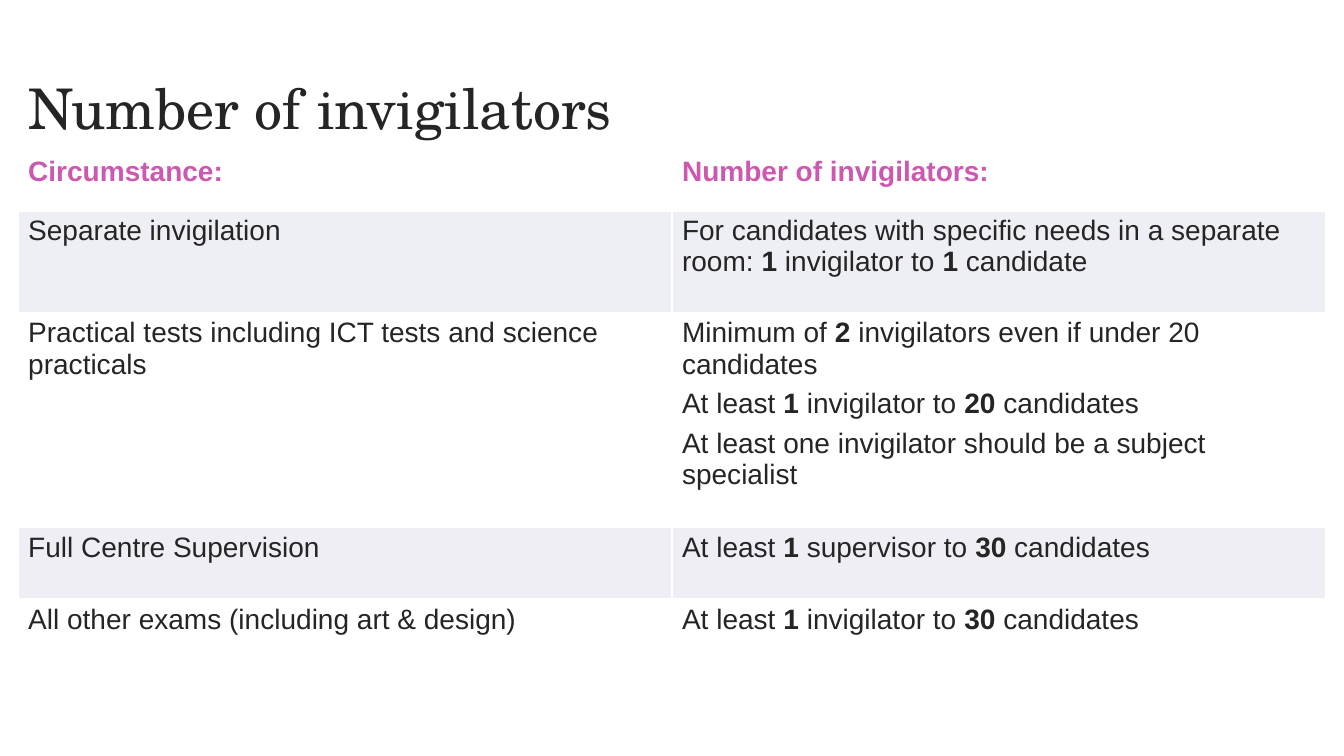
import dataclasses

import pptx
import pptx.dml.color
import pptx.enum.text
import pptx.oxml
import pptx.oxml.ns
import pptx.util

Inches = pptx.util.Inches
Pt = pptx.util.Pt

COLORS = {
    "text": "252525",
    "heading": "CC58B0",
    "white": "FFFFFF",
    "band": "EEEEF5",
    "band_low": "EEEEF4",
}


@dataclasses.dataclass(frozen=True)
class Run:
    text: str
    bold: bool = False


@dataclasses.dataclass(frozen=True)
class Row:
    height: float
    fill: str
    circumstance: list[list[Run]]
    invigilators: list[list[Run]]
    color: str = "text"
    bottom_line: float = 1


def ratio(before: str, first: str, middle: str, second: str, after: str) -> list[Run]:
    return [Run(before), Run(first, True), Run(middle), Run(second, True), Run(after)]


ROWS = [
    Row(0.58, "white", [[Run("Circumstance:", True)]],
        [[Run("Number of invigilators:", True)]], "heading", 3),
    Row(1.02, "band", [[Run("Separate invigilation")]],
        [ratio("For candidates with specific needs in a separate room: ",
               "1", " invigilator to ", "1", " candidate")]),
    Row(2.13, "white",
        [[Run("Practical tests including ICT tests and science practicals")]],
        [[Run("Minimum of "), Run("2 ", True),
          Run("invigilators even if under 20 candidates")],
         ratio("At least ", "1 ", "invigilator to ", "20 ", "candidates"),
         [Run("At least one invigilator should be a subject specialist")]]),
    Row(0.71, "band_low", [[Run("Full Centre Supervision")]],
        [ratio("At least ", "1", " supervisor to ", "30", " candidates")]),
    Row(0.75, "white", [[Run("All other exams (including art & design)")]],
        [ratio("At least ", "1", " invigilator to ", "30", " candidates")]),
    Row(0.75, "white", [], []),
]


def rgb(name: str) -> pptx.dml.color.RGBColor:
    return pptx.dml.color.RGBColor.from_string(COLORS[name])


def add_run(p, run: Run, size: float, font: str, color: str) -> None:
    r = p.add_run()
    r.text = run.text
    r.font.size = Pt(size)
    r.font.name = font
    r.font.bold = run.bold
    r.font.color.rgb = rgb(color)


def set_borders(cell, top: float, bottom: float) -> None:
    tc_pr = cell._tc.get_or_add_tcPr()
    sides = {"L": 1, "R": 1, "T": top, "B": bottom}
    for i, (side, width) in enumerate(sides.items()):
        tc_pr.insert(i, pptx.oxml.parse_xml(
            f'<a:ln{side} {pptx.oxml.ns.nsdecls("a")} w="{Pt(width)}">'
            f'<a:solidFill><a:srgbClr val="{COLORS["white"]}"/></a:solidFill>'
            f'</a:ln{side}>'))


def fill_cell(cell, paragraphs: list[list[Run]], row: Row, top_line: float) -> None:
    cell.fill.solid()
    cell.fill.fore_color.rgb = rgb(row.fill)
    set_borders(cell, top_line, row.bottom_line)
    tf = cell.text_frame
    for i, runs in enumerate(paragraphs):
        p = tf.add_paragraph() if i else tf.paragraphs[0]
        if i:
            p.space_before = Pt(6)
        for run in runs:
            add_run(p, run, 20, "Arial", row.color)


def add_title(s) -> None:
    sp = s.shapes.add_textbox(Inches(0.18), Inches(0.71), Inches(12.72), Inches(0.79))
    tf = sp.text_frame
    tf.word_wrap = True
    tf.vertical_anchor = pptx.enum.text.MSO_ANCHOR.MIDDLE
    p = tf.paragraphs[0]
    p.line_spacing = 0.9
    add_run(p, Run("Number of invigilators"), 40, "TeX Gyre Schola", "text")


def add_invigilator_table(s) -> None:
    height = sum(row.height for row in ROWS)
    table = s.shapes.add_table(len(ROWS), 2, Inches(0.18), Inches(1.5),
                               Inches(12.97), Inches(height)).table
    table.first_row = False
    table.horz_banding = False
    top_line = 1
    for i, row in enumerate(ROWS):
        table.rows[i].height = Inches(row.height)
        for j, paragraphs in enumerate((row.circumstance, row.invigilators)):
            fill_cell(table.cell(i, j), paragraphs, row, top_line)
        top_line = row.bottom_line


def main() -> None:
    prs = pptx.Presentation()
    prs.slide_width = Inches(13.33)
    prs.slide_height = Inches(7.5)
    s = prs.slides.add_slide(prs.slide_layouts[6])
    add_title(s)
    add_invigilator_table(s)
    prs.save("out.pptx")


if __name__ == "__main__":
    main()
